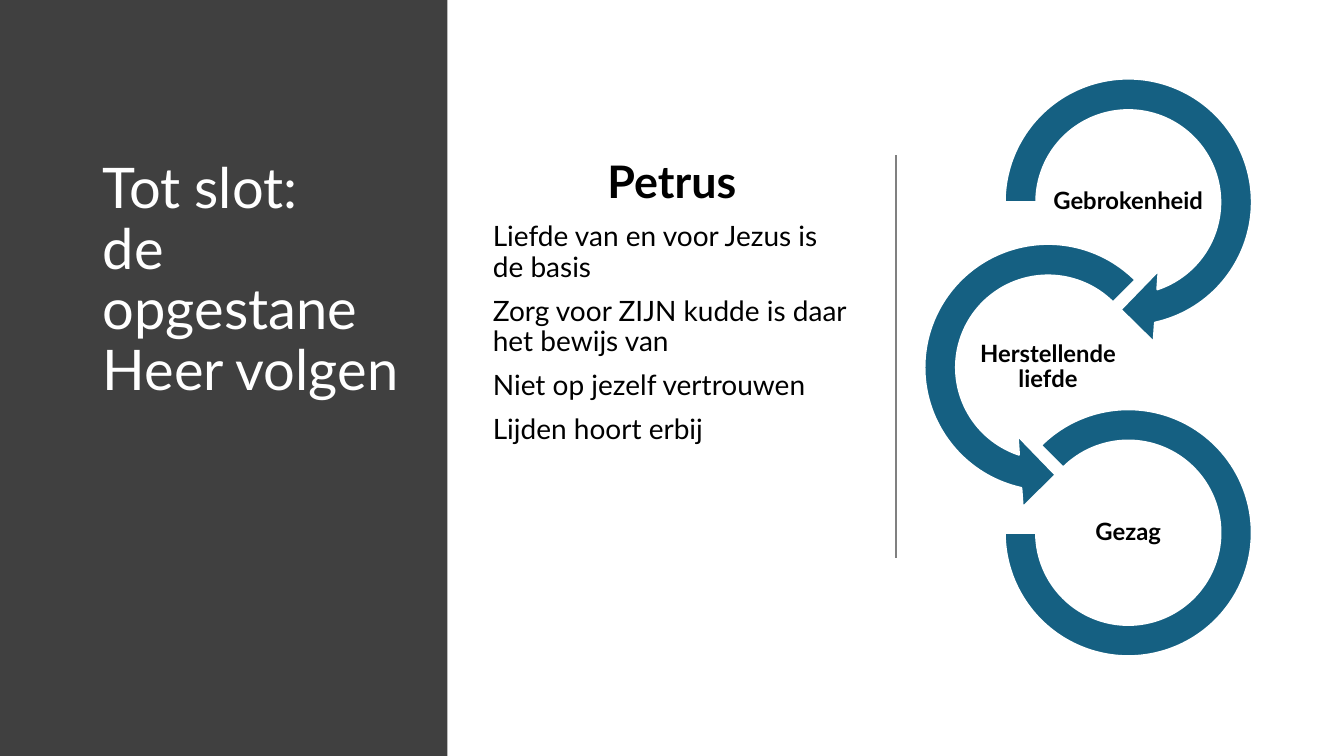
from dataclasses import dataclass

from lxml.etree import SubElement
from pptx import Presentation
from pptx.dml.color import RGBColor
from pptx.enum.shapes import MSO_CONNECTOR, MSO_SHAPE
from pptx.enum.text import MSO_ANCHOR, MSO_AUTO_SIZE, PP_ALIGN
from pptx.oxml.ns import qn
from pptx.util import Emu, Inches, Pt

SLIDE_WIDTH, SLIDE_HEIGHT = Inches(13.333), Inches(7.5)
FONT = "Lato"
BLACK, WHITE, CHARCOAL, GRAY, TEAL = "000000", "FFFFFF", "404040", "808080", "156082"

# Lengths are percentages of the slide's width and height
TOP, CONTENT_HEIGHT = 20.53, 63.6
FIRST_STAGE_Y, STAGE_STEP = 26.73, 21.87
LABEL_WIDTH, LABEL_HEIGHT = 11.85, 10.53


@dataclass(frozen=True)
class Box:
    left: float
    top: float
    width: float
    height: float

    def lengths(self) -> tuple[Emu, Emu, Emu, Emu]:
        return across(self.left), down(self.top), across(self.width), down(self.height)


@dataclass(frozen=True)
class Stage:
    label: str
    outline: MSO_SHAPE
    center_x: float
    width: float
    height: float
    adjustments: tuple[float, ...]


STAGES = (
    Stage("Gebrokenheid", MSO_SHAPE.CIRCULAR_ARROW, 83.95, 21.38, 38,
          (0.11, 11.42, 45, 108, 0.125)),
    Stage("Herstellende liefde", MSO_SHAPE.LEFT_CIRCULAR_ARROW, 77.98, 21.38, 38,
          (0.11, 11.42, 63, 189, 0.125)),
    Stage("Gezag", MSO_SHAPE.BLOCK_ARC, 83.95, 18.38, 32.67, (135, 108, 0.127)),
)
LESSONS = (
    "Liefde van en voor Jezus is de basis",
    "Zorg voor ZIJN kudde is daar het bewijs van",
    "Niet op jezelf vertrouwen",
    "Lijden hoort erbij",
)


def across(share: float) -> Emu:
    return Emu(round(SLIDE_WIDTH * share / 100))


def down(share: float) -> Emu:
    return Emu(round(SLIDE_HEIGHT * share / 100))


def color(value: str) -> RGBColor:
    return RGBColor.from_string(value)


def centered(x: float, y: float, width: float, height: float) -> Box:
    return Box(x - width / 2, y - height / 2, width, height)


def apply(target, **values) -> None:
    for name, value in values.items():
        setattr(target, name, value)


def write(paragraph, text: str, size: float, ink: str = BLACK, bold: bool = False,
          align: PP_ALIGN = PP_ALIGN.LEFT, before: float = 0) -> None:
    paragraph.text = text
    apply(paragraph, alignment=align, line_spacing=0.9, space_before=Pt(before))
    for run in paragraph.runs:
        apply(run.font, name=FONT, size=Pt(size), bold=bold)
        run.font.color.rgb = color(ink)


def add_text_frame(slide, box: Box):
    frame = slide.shapes.add_textbox(*box.lengths()).text_frame
    frame.word_wrap = True
    return frame


def add_filled(slide, outline: MSO_SHAPE, box: Box, fill: str):
    shape = slide.shapes.add_shape(outline, *box.lengths())
    shape.shadow.inherit = False
    shape.fill.solid()
    shape.fill.fore_color.rgb = color(fill)
    return shape


def add_stage(slide, stage: Stage, center_y: float) -> None:
    ring = add_filled(slide, stage.outline,
                      centered(stage.center_x, center_y, stage.width, stage.height), TEAL)
    ring.line.color.rgb = color(WHITE)
    ring.line.width = Pt(1.5)
    for index, value in enumerate(stage.adjustments):
        ring.adjustments[index] = value

    label = add_text_frame(
        slide, centered(stage.center_x, center_y, LABEL_WIDTH, LABEL_HEIGHT))
    inset = Inches(0.01)
    apply(label, vertical_anchor=MSO_ANCHOR.MIDDLE, margin_left=inset,
          margin_right=inset, margin_top=inset, margin_bottom=inset)
    write(label.paragraphs[0], stage.label, 17, bold=True, align=PP_ALIGN.CENTER)


def main() -> None:
    presentation = Presentation()
    apply(presentation, slide_width=SLIDE_WIDTH, slide_height=SLIDE_HEIGHT)
    slide = presentation.slides.add_slide(presentation.slide_layouts[5])

    # Dark panel, sent behind the title
    panel = add_filled(slide, MSO_SHAPE.RECTANGLE, Box(0, 0, 33.3, 100), CHARCOAL)
    panel.line.fill.background()
    title = slide.shapes.title
    title.element.addprevious(panel.element)

    # Title
    left, top, width, height = Box(6.9, TOP, 23.78, CONTENT_HEIGHT).lengths()
    apply(title, left=left, top=top, width=width, height=height)
    apply(title.text_frame, vertical_anchor=MSO_ANCHOR.TOP, word_wrap=True,
          auto_size=MSO_AUTO_SIZE.NONE)
    write(title.text_frame.paragraphs[0], "Tot slot:\vde opgestane Heer volgen", 40, WHITE)

    # Lessons from Petrus
    lessons = add_text_frame(slide, Box(35.93, TOP, 28.12, CONTENT_HEIGHT))
    write(lessons.paragraphs[0], "Petrus", 32, bold=True, align=PP_ALIGN.CENTER)
    for lesson in LESSONS:
        write(lessons.add_paragraph(), lesson, 20, before=10)

    # Divider
    divider = slide.shapes.add_connector(
        MSO_CONNECTOR.STRAIGHT, across(66.68), down(TOP), across(66.68), down(73.87))
    divider.line.color.rgb = color(GRAY)
    divider.line.width = Pt(1)
    SubElement(divider.element.spPr, qn("a:effectLst"))

    # Chain of stages
    for row, stage in enumerate(STAGES):
        add_stage(slide, stage, FIRST_STAGE_Y + row * STAGE_STEP)

    presentation.save("out.pptx")


if __name__ == "__main__":
    main()
